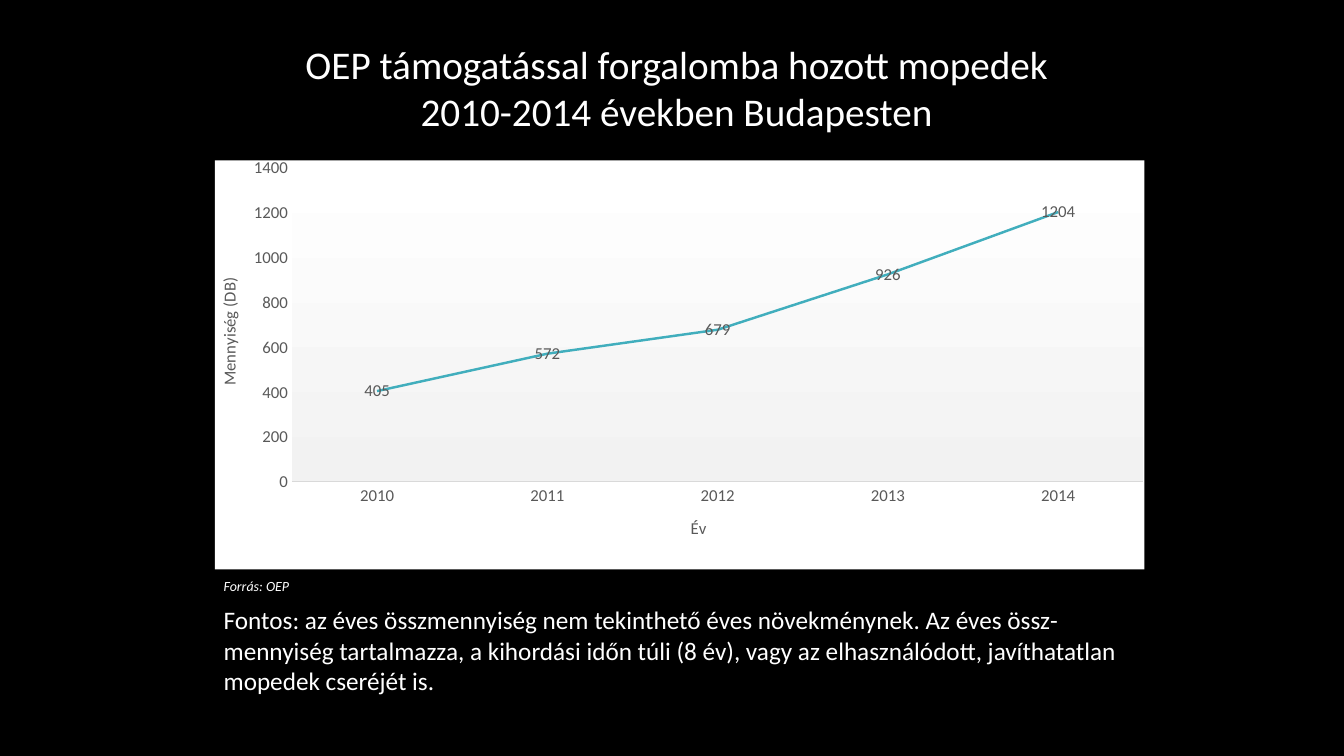
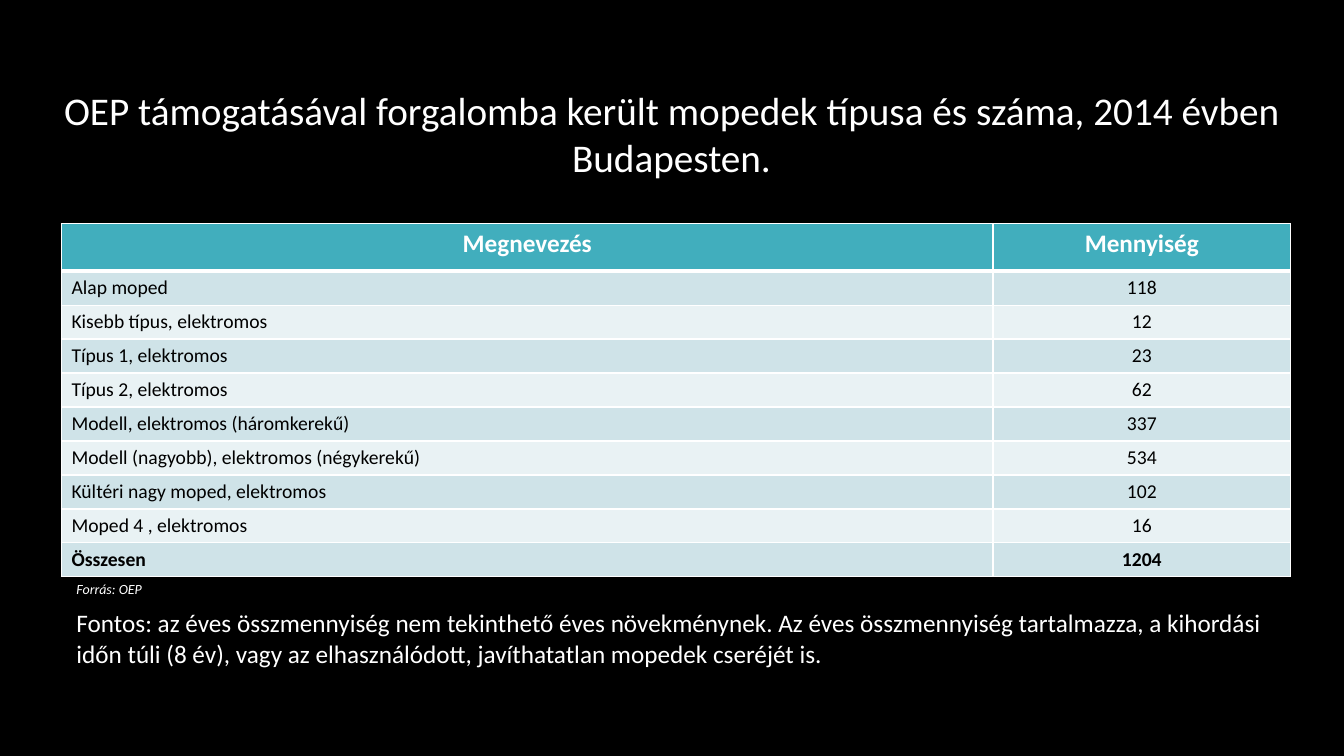
from lxml import etree
from pptx import Presentation
from pptx.chart.data import CategoryChartData
from pptx.dml.color import RGBColor
from pptx.enum.chart import XL_CHART_TYPE, XL_LABEL_POSITION, XL_MARKER_STYLE, XL_TICK_MARK
from pptx.enum.text import MSO_ANCHOR, MSO_AUTO_SIZE, PP_ALIGN
from pptx.oxml import parse_xml
from pptx.oxml.ns import nsdecls, qn
from pptx.util import Inches, Pt

LINE_CHART = XL_CHART_TYPE.LINE
LABEL_CENTER = XL_LABEL_POSITION.CENTER
NO_MARKER = XL_MARKER_STYLE.NONE
NO_TICK = XL_TICK_MARK.NONE
LEFT, CENTER = PP_ALIGN.LEFT, PP_ALIGN.CENTER
TOP = MSO_ANCHOR.TOP
FIXED = MSO_AUTO_SIZE.NONE

FONT = "Calibri"
COLORS = {
    "background": "000000",
    "light": "FFFFFF",
    "dark": "000000",
    "accent": "41AEBD",
    "band": "CFE3E8",
    "band_pale": "E9F2F4",
    "plot_end": "F2F2F2",
    "chart_text": "595959",
    "axis": "D9D9D9",
}
TITLE_ONLY = 5

SOURCE = "Forrás: OEP"
NOTE = (
    "Fontos: az éves összmennyiség nem tekinthető éves növekménynek. "
    "Az éves {total} tartalmazza, a kihordási időn túli (8 év), "
    "vagy az elhasználódott, javíthatatlan mopedek cseréjét is."
)
YEARLY = {"2010": 405, "2011": 572, "2012": 679, "2013": 926, "2014": 1204}
MOPEDS = [
    ("Alap moped", 118),
    ("Kisebb típus, elektromos", 12),
    ("Típus 1, elektromos", 23),
    ("Típus 2, elektromos", 62),
    ("Modell, elektromos (háromkerekű)", 337),
    ("Modell (nagyobb), elektromos (négykerekű)", 534),
    ("Kültéri nagy moped, elektromos", 102),
    ("Moped 4 , elektromos", 16),
]


def color(name):
    """Return the named colour."""
    return RGBColor.from_string(COLORS[name])


def style_font(font, size, color_name, bold=False, italic=False):
    """Apply the deck's typeface with the given look."""
    font.name = FONT
    font.size = Pt(size)
    font.bold = bold
    font.italic = italic
    font.color.rgb = color(color_name)


def add_run(para, text, size, color_name="light", bold=False, italic=False):
    """Append one formatted run to a paragraph."""
    span = para.add_run()
    span.text = text
    style_font(span.font, size, color_name, bold, italic)


def place(shape, left, top, width, height):
    """Move and size a shape, in inches."""
    shape.left, shape.top = Inches(left), Inches(top)
    shape.width, shape.height = Inches(width), Inches(height)


def add_titled_slide(deck, lines, *bounds):
    """Add a slide with a centred title of one or more lines."""
    slide = deck.slides.add_slide(deck.slide_layouts[TITLE_ONLY])
    title = slide.shapes.title
    place(title, *bounds)
    frame = title.text_frame
    frame.word_wrap = True
    frame.auto_size = FIXED
    frame.vertical_anchor = TOP
    para = frame.paragraphs[0]
    para.alignment = CENTER
    for index, line in enumerate(lines):
        if index:
            para.add_line_break()
        add_run(para, line, 28)
    return slide


def add_text(slide, text, size, bounds, italic=False):
    """Add a wrapping text box with one paragraph."""
    box = slide.shapes.add_textbox(*(Inches(value) for value in bounds))
    box.text_frame.word_wrap = True
    add_run(box.text_frame.paragraphs[0], text, size, italic=italic)


def add_notes(slide, total, left, top, width, height):
    """Add the source line and the remark under it."""
    add_text(slide, SOURCE, 10, (left, top, 2.16, 0.27), italic=True)
    add_text(slide, NOTE.format(total=total), 18, (left, top + 0.27, width, height))


def style_axis(axis, title):
    """Format an axis, its labels and its title."""
    axis.has_major_gridlines = False
    axis.major_tick_mark = axis.minor_tick_mark = NO_TICK
    style_font(axis.tick_labels.font, 12, "chart_text")
    frame = axis.axis_title.text_frame
    add_run(frame.paragraphs[0], title, 12, "chart_text")
    return frame


def fill_chart(chart):
    """Fill the chart area and set the plot area's gradient and position."""
    space = chart._chartSpace
    area = parse_xml(
        f'<c:spPr {nsdecls("c", "a")}><a:solidFill><a:srgbClr val="{COLORS["light"]}"/>'
        "</a:solidFill><a:ln><a:noFill/></a:ln></c:spPr>"
    )
    space.find(qn("c:chart")).addnext(area)
    plot_area = space.find(".//" + qn("c:plotArea"))
    for layout in plot_area.findall(qn("c:layout")):
        plot_area.remove(layout)
    settings = {
        "layoutTarget": "inner", "xMode": "edge", "yMode": "edge",
        "x": 0.083, "y": 0.019, "w": 0.916, "h": 0.767,
    }
    layout = etree.Element(qn("c:layout"))
    manual = etree.SubElement(layout, qn("c:manualLayout"))
    for tag, value in settings.items():
        etree.SubElement(manual, qn("c:" + tag)).set("val", str(value))
    plot_area.insert(0, layout)
    plot_area.append(parse_xml(
        f'<c:spPr {nsdecls("c", "a")}><a:gradFill><a:gsLst>'
        f'<a:gs pos="0"><a:srgbClr val="{COLORS["light"]}"/></a:gs>'
        f'<a:gs pos="100000"><a:srgbClr val="{COLORS["plot_end"]}"/></a:gs>'
        '</a:gsLst><a:lin ang="5400000" scaled="0"/></a:gradFill></c:spPr>'
    ))


def add_line_chart(slide, *bounds):
    """Add the line chart of yearly quantities."""
    data = CategoryChartData()
    data.categories = list(YEARLY)
    data.add_series("Mennyiség", list(YEARLY.values()))
    position = (Inches(value) for value in bounds)
    chart = slide.shapes.add_chart(LINE_CHART, *position, data).chart
    chart.has_title = False
    chart.has_legend = False
    style_font(chart.font, 12, "chart_text")

    style_axis(chart.category_axis, "Év")
    axis_line = chart.category_axis.format.line
    axis_line.color.rgb = color("axis")
    axis_line.width = Pt(0.75)

    value_axis = chart.value_axis
    value_title = style_axis(value_axis, "Mennyiség (DB)")
    value_title._txBody.bodyPr.set("rot", "-5400000")
    value_axis.minimum_scale, value_axis.maximum_scale = 0, 1400
    value_axis.major_unit = 200
    value_axis.format.line.fill.background()

    plot = chart.plots[0]
    plot.vary_by_categories = False
    series = plot.series[0]
    series.smooth = False
    series.marker.style = NO_MARKER
    series.format.line.color.rgb = color("accent")
    series.format.line.width = Pt(1.75)
    labels = series.data_labels
    labels.show_value = True
    labels.position = LABEL_CENTER
    style_font(labels.font, 12, "chart_text")
    fill_chart(chart)


def set_borders(cell, top, bottom):
    """Draw light borders, with top and bottom widths in points."""
    properties = cell._tc.get_or_add_tcPr()
    widths = {"lnL": 1, "lnR": 1, "lnT": top, "lnB": bottom}
    for index, (side, width) in enumerate(widths.items()):
        properties.insert(index, parse_xml(
            f'<a:{side} {nsdecls("a")} w="{Pt(width)}"><a:solidFill>'
            f'<a:srgbClr val="{COLORS["light"]}"/></a:solidFill></a:{side}>'
        ))


def add_moped_table(slide, left, top, column_widths, header_height, row_height):
    """Add the table of moped types with a header and a total row."""
    total = sum(quantity for _, quantity in MOPEDS)
    rows = [("Megnevezés", "Mennyiség"), *MOPEDS, ("Összesen", total)]
    last = len(rows) - 1
    table = slide.shapes.add_table(
        len(rows), len(column_widths), Inches(left), Inches(top),
        Inches(sum(column_widths)), Inches(header_height + last * row_height),
    ).table
    table.horz_banding = False
    for column, width in zip(table.columns, column_widths):
        column.width = Inches(width)
    for row_index, values in enumerate(rows):
        header = row_index == 0
        table.rows[row_index].height = Inches(header_height if header else row_height)
        band = "band" if row_index % 2 else "band_pale"
        for column_index, value in enumerate(values):
            cell = table.cell(row_index, column_index)
            cell.fill.solid()
            cell.fill.fore_color.rgb = color("accent" if header else band)
            set_borders(cell, 3 if row_index == 1 else 1, 3 if header else 1)
            para = cell.text_frame.paragraphs[0]
            para.alignment = CENTER if header or column_index else LEFT
            add_run(
                para, str(value), 18 if header else 14,
                "light" if header else "dark", bold=row_index in (0, last),
            )


def main():
    """Build and save the deck."""
    deck = Presentation()
    deck.slide_width, deck.slide_height = Inches(13.33), Inches(7.5)
    background = deck.slide_master.background.fill
    background.solid()
    background.fore_color.rgb = color("background")

    trend = add_titled_slide(
        deck,
        ["OEP támogatással forgalomba hozott mopedek", "2010-2014 években Budapesten"],
        0.31, 0.35, 12.8, 1.1,
    )
    add_line_chart(trend, 2.13, 1.57, 9.22, 4.08)
    add_notes(trend, "össz-mennyiség", 2.12, 5.68, 9.24, 1.02)

    types = add_titled_slide(
        deck,
        ["OEP támogatásával forgalomba került mopedek típusa és száma, "
         "2014 évben Budapesten."],
        0.4, 0.81, 12.52, 1.04,
    )
    add_moped_table(types, 0.61, 2.22, (9.24, 2.95), 0.47, 0.33)
    add_notes(types, "összmennyiség", 0.66, 5.71, 12.06, 0.71)
    deck.save("out.pptx")


if __name__ == "__main__":
    main()
